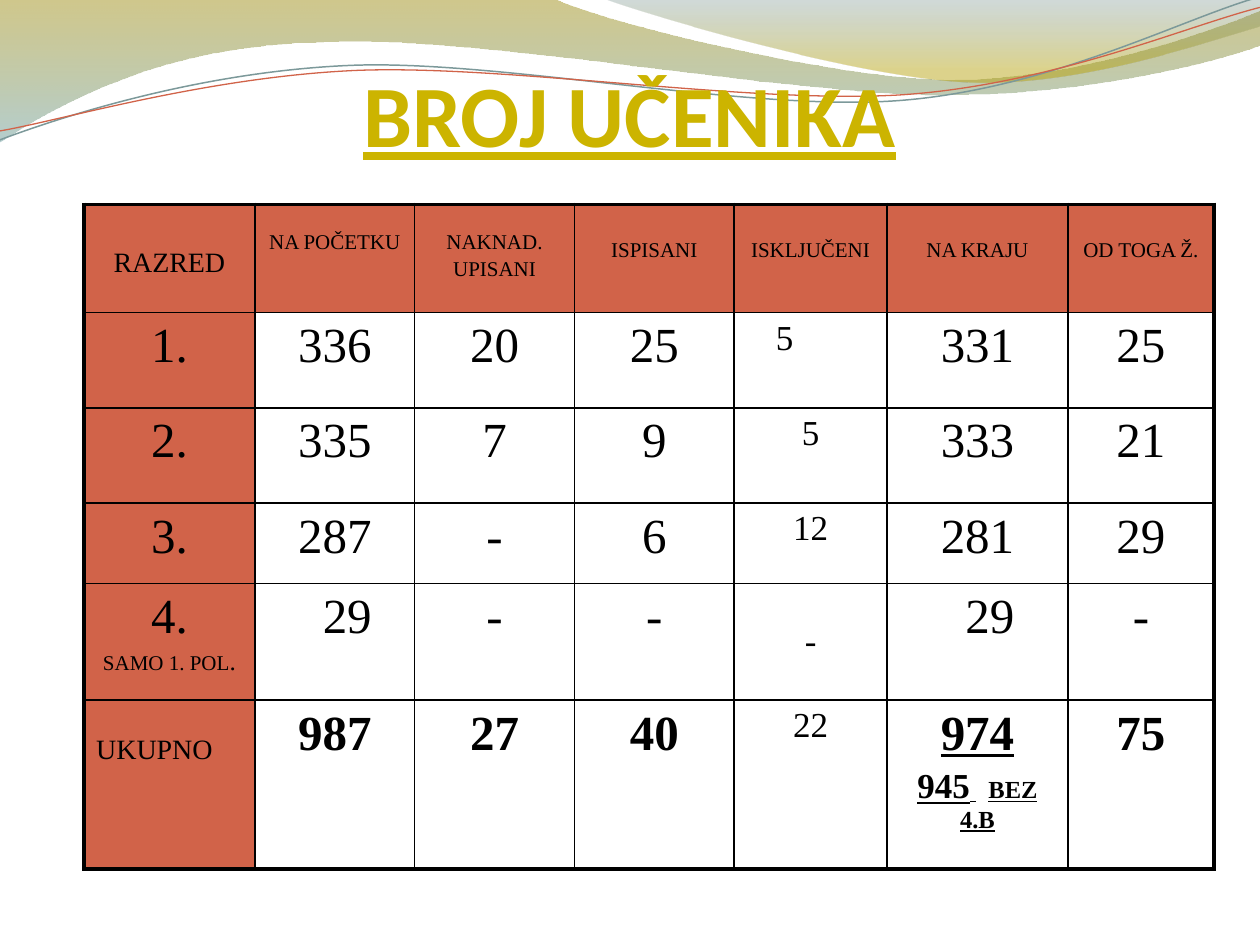
"""Build the slide with the pupil count table under a wave header."""
from lxml.etree import SubElement
from pptx import Presentation
from pptx.dml.color import RGBColor
from pptx.enum.text import MSO_ANCHOR, PP_ALIGN
from pptx.oxml import parse_xml
from pptx.oxml.ns import nsdecls, qn
from pptx.util import Cm, Pt

THEME = {
    "title": "CCB400", "ink": "000000", "paper": "FFFFFF", "head": "D16349",
    "olive": "978500", "teal": "77A5A6", "slate": "648484", "gold": "B49F00",
    "grey": "7C999A", "red": "D16349",
    "sans": "Calibri", "serif": "Times New Roman",
    "top": 50, "big": 28, "mid": 20, "label": 16, "dot": 14.3, "note": 14, "small": 12,
    "thin": 1, "thick": 2.25, "gap": 7,
}

TITLE = "BROJ UČENIKA"
ROWS = [
    ["RAZRED", "NA POČETKU", "NAKNAD.", "ISPISANI", "ISKLJUČENI", "NA KRAJU", "OD TOGA Ž."],
    ["1.", "336", "20", "25", "5", "331", "25"],
    ["2.", "335", "7", "9", "5", "333", "21"],
    ["3.", "287", "-", "6", "12", "281", "29"],
    ["4.", "29", "-", "-", "-", "29", "-"],
    ["UKUPNO", "987", "27", "40", "22", "974", "75"],
]
MORE = {
    (0, 2): [("UPISANI", "small")],
    (4, 0): [("SAMO 1. POL", "small"), (".", "dot")],
    (5, 5): [("945", "mid"), (" ", "note"), ("BEZ 4.B", "note")],
}
WIDTHS = [3.45, 3.22, 3.22, 3.22, 3.08, 3.65, 2.94]
HEIGHTS = [2.18, 1.92, 1.92, 1.62, 2.35, 3.41]
TOPS = {(0, 0): 0.87, (0, 1): 0.53, (0, 2): 0.53, (5, 0): 0.7,
        **{(0, col): 0.69 for col in range(3, 7)}}
SIDES = {(1, 4): (0.25, 1.3), (4, 1): (0.75, 0.25), (4, 5): (0.75, 0.25),
         (5, 5): (0.5, 0.5)}

BANDS = [
    ([[(0, -0.02)], [(11.18, -0.02)],
      [(12.09, 0.43), (16.87, 1.6), (19.25, 1.6)],
      [(21.67, 1.6), (24.33, 0.66), (25.4, 0.23)],
      [(25.42, 0.91)],
      [(24.97, 1.12), (22.1, 1.93), (18.95, 1.91)],
      [(15.8, 1.91), (9.7, 0.71), (6.53, 0.86)],
      [(3.28, 0.89), (1.17, 2.11), (-0.02, 2.87)]],
     [(0, "olive", 45), (1, "teal", 55)]),
    ([[(12.17, -0.02)],
      [(12.93, 0.28), (17.32, 1.57), (19.53, 1.65)],
      [(21.74, 1.75), (24.41, 0.81), (25.4, 0.53)],
      [(25.4, 0)]],
     [(0, "slate", 30), (0.8, "gold", 45)]),
]
LINES = [
    ([[(0, 2.82)],
      [(1.22, 2.36), (4.01, 1.45), (7.04, 1.32)],
      [(10.03, 1.19), (15.06, 2.26), (18.11, 2.03)],
      [(21.16, 1.8), (23.83, 0.38), (25.35, -0.05)]], "grey", 0.85),
    ([[(0, 2.64)],
      [(1.19, 2.44), (4.17, 1.55), (7.19, 1.42)],
      [(10.24, 1.3), (15.16, 2.11), (18.21, 1.91)],
      [(21.23, 1.7), (23.9, 0.53), (25.4, 0.15)]], "red", 0.75),
]


def tint(name):
    return RGBColor.from_string(THEME[name])


def draw(slide, parts, close):
    dots = [(Cm(x), Cm(y)) for part in parts for x, y in part]
    pen = slide.shapes.build_freeform(*dots[0])
    pen.add_line_segments(dots[1:], close=close)
    shape = pen.convert_to_shape()
    shape.shadow.inherit = False
    legs = iter(list(shape._element.iter(qn("a:lnTo"))))
    for part in parts[1:]:
        group = [next(legs) for _ in part]
        if len(group) == 3:
            curve = parse_xml(f'<a:cubicBezTo {nsdecls("a")}/>')
            group[0].addprevious(curve)
            for leg in group:
                curve.append(leg[0])
                leg.getparent().remove(leg)
    return shape


def add_band(slide, parts, stops):
    shape = draw(slide, parts, True)
    shape.line.fill.background()
    shape.fill.gradient()
    shape.fill.gradient_angle = 270
    for stop, (place, name, _) in zip(shape.fill.gradient_stops, stops):
        stop.position = place
        stop.color.rgb = tint(name)
    for node, (_, _, share) in zip(shape._element.iter(qn("a:srgbClr")), stops):
        SubElement(node, qn("a:alpha")).set("val", str(share * 1000))


def add_line(slide, parts, name, width):
    shape = draw(slide, parts, False)
    shape.fill.background()
    shape.line.color.rgb = tint(name)
    shape.line.width = Pt(width)


def style(run, size, color="ink", face="serif", bold=False, under=False):
    run.font.size = Pt(THEME[size])
    run.font.name = THEME[face]
    run.font.color.rgb = tint(color)
    run.font.bold = bold
    run.font.underline = under
    if run.text == " ":
        run._r.get_or_add_rPr().set("spc", str(THEME["gap"] * 100))


def add_title(slide):
    box = slide.shapes.add_textbox(Cm(1.9), Cm(0.93), Cm(21.59), Cm(2.39))
    frame = box.text_frame
    frame.word_wrap = True
    frame.vertical_anchor = MSO_ANCHOR.BOTTOM
    frame.margin_left = frame.margin_right = frame.margin_bottom = 0
    frame.text = TITLE
    para = frame.paragraphs[0]
    para.alignment = PP_ALIGN.CENTER
    style(para.runs[0], "top", "title", "sans", True, True)


def edge(cell, row, col):
    outer = {"L": col == 0, "R": col == len(WIDTHS) - 1,
             "T": row == 0, "B": row == len(HEIGHTS) - 1}
    props = cell._tc.get_or_add_tcPr()
    for spot, (side, rim) in enumerate(outer.items()):
        width = Pt(THEME["thick" if rim else "thin"])
        props.insert(spot, parse_xml(
            f'<a:ln{side} {nsdecls("a")} w="{width}"><a:solidFill>'
            f'<a:srgbClr val="{THEME["ink"]}"/></a:solidFill></a:ln{side}>'))


def pick(row, col):
    if (row, col) in ((0, 0), (5, 0)):
        return "label"
    if row == 0:
        return "small"
    return "mid" if col == 4 else "big"


def fill_cell(cell, row, col):
    spot = row, col
    cell.fill.solid()
    cell.fill.fore_color.rgb = tint("head" if row == 0 or col == 0 else "paper")
    edge(cell, row, col)
    left, right = SIDES.get(spot, (0.25, 0.25))
    cell.margin_left, cell.margin_right = Cm(left), Cm(right)
    cell.margin_top = Cm(TOPS.get(spot, 0.13))
    cell.vertical_anchor = MSO_ANCHOR.MIDDLE if spot == (4, 4) else MSO_ANCHOR.TOP
    bold = row == 5 and col not in (0, 4)
    paras = [[(ROWS[row][col], pick(row, col))]]
    if spot in MORE:
        paras.append(MORE[spot])
    frame = cell.text_frame
    frame.text = "\n".join(runs[0][0] for runs in paras)
    for para, runs in zip(frame.paragraphs, paras):
        para.alignment = PP_ALIGN.LEFT if spot == (5, 0) else PP_ALIGN.CENTER
        if runs is not paras[0]:
            para.space_before = Pt(THEME[runs[0][1]] * 0.2)
        for text, _ in runs[1:]:
            para.add_run().text = text
        for run, (_, size) in zip(para.runs, runs):
            style(run, size, bold=bold, under=spot == (5, 5))


def add_grid(slide):
    grid = slide.shapes.add_table(len(HEIGHTS), len(WIDTHS), Cm(1.69), Cm(4.12),
                                  Cm(sum(WIDTHS)), Cm(sum(HEIGHTS))).table
    grid.first_row = grid.horz_banding = False
    for col, width in enumerate(WIDTHS):
        grid.columns[col].width = Cm(width)
    for row, height in enumerate(HEIGHTS):
        grid.rows[row].height = Cm(height)
        for col in range(len(WIDTHS)):
            fill_cell(grid.cell(row, col), row, col)


def main():
    deck = Presentation()
    deck.slide_width, deck.slide_height = Cm(25.4), Cm(19.05)
    slide = deck.slides.add_slide(deck.slide_layouts[6])
    for band in BANDS:
        add_band(slide, *band)
    for line in LINES:
        add_line(slide, *line)
    add_title(slide)
    add_grid(slide)
    deck.save("out.pptx")


if __name__ == "__main__":
    main()
